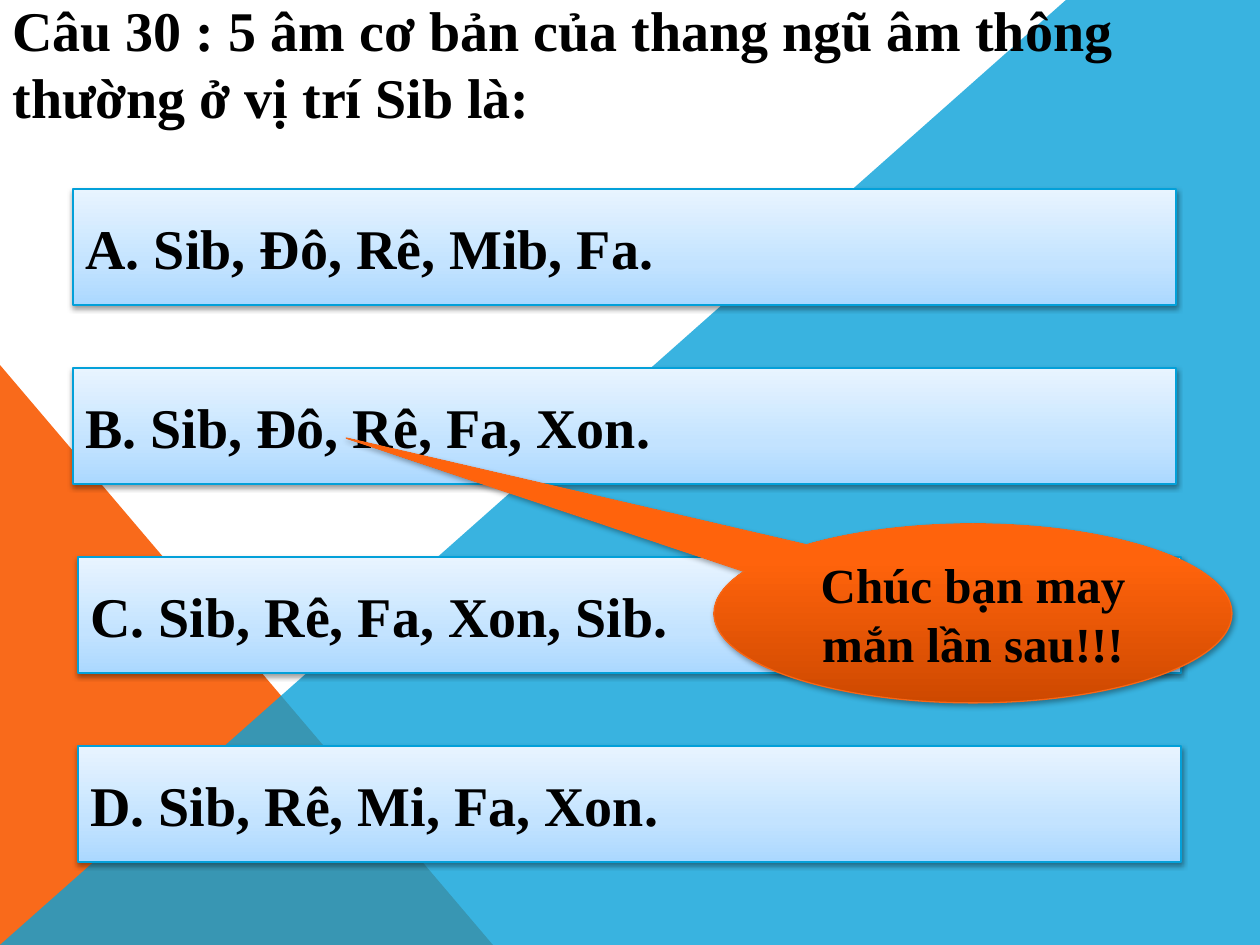
from dataclasses import dataclass

from lxml.etree import SubElement
from pptx import Presentation
from pptx.dml.color import RGBColor
from pptx.enum.shapes import MSO_SHAPE
from pptx.enum.text import MSO_ANCHOR, PP_ALIGN
from pptx.oxml.ns import qn
from pptx.util import Emu, Pt

PX = 914400 // 126


@dataclass(frozen=True)
class Theme:
    font: str = "Times New Roman"
    text: str = "000000"
    orange: str = "F96A1B"
    blue: str = "08A1D9"
    answer_line: str = "03A0D9"
    answer_stops: tuple = ((0, "ABD8FF"), (35, "C3E3FF"), (100, "E8F4FF"))
    callout_line: str = "F96615"
    callout_stops: tuple = ((0, "CE4900"), (80, "FF630C"), (100, "FF640E"))
    large: int = 32
    medium: int = 28


THEME = Theme()


def px(*lengths):
    return [Emu(length * PX) for length in lengths]


def add_color(parent, color, alpha=100):
    node = SubElement(parent, qn("a:srgbClr"), val=color)
    if alpha < 100:
        SubElement(node, qn("a:alpha"), val=str(alpha * 1000))


def fill_plain(shape, color, alpha=100):
    shape.shadow.inherit = False
    shape.line.fill.background()
    shape.fill.solid()
    shape.fill.fore_color.rgb = RGBColor.from_string(color)
    if alpha < 100:
        node = shape.fill._xPr.find(".//" + qn("a:srgbClr"))
        SubElement(node, qn("a:alpha"), val=str(alpha * 1000))


def fill_raised(shape, stops, line, shadow_alpha):
    """Vertical gradient from the bottom up, thin outline and soft shadow."""
    shape.fill.gradient()
    gradient = shape._element.spPr.find(qn("a:gradFill"))
    for child in list(gradient):
        gradient.remove(child)
    stop_list = SubElement(gradient, qn("a:gsLst"))
    for position, color in stops:
        add_color(SubElement(stop_list, qn("a:gs"), pos=str(position * 1000)), color)
    SubElement(gradient, qn("a:lin"), ang="16200000", scaled="0")

    shape.line.color.rgb = RGBColor.from_string(line)
    shape.line.width = Pt(0.75)

    shape.shadow.inherit = False
    effects = shape._element.spPr.find(qn("a:effectLst"))
    shadow = SubElement(effects, qn("a:outerShdw"), blurRad="40000", dist="20000",
                        dir="5400000", rotWithShape="0")
    add_color(shadow, "000000", shadow_alpha)


def write_text(shape, text, size=THEME.large, align=PP_ALIGN.LEFT, before=0):
    frame = shape.text_frame
    frame.word_wrap = True
    frame.vertical_anchor = MSO_ANCHOR.MIDDLE
    para = frame.paragraphs[0]
    para.alignment = align
    para.space_before = Pt(before)
    span = para.add_run()
    span.text = text
    span.font.name = THEME.font
    span.font.size = Pt(size)
    span.font.bold = True
    span.font.color.rgb = RGBColor.from_string(THEME.text)


def add_background(page):
    triangle = page.shapes.add_shape(MSO_SHAPE.RIGHT_TRIANGLE, *px(0, 365, 493, 580))
    fill_plain(triangle, THEME.orange)
    builder = page.shapes.build_freeform(0, 945, scale=PX)
    builder.add_line_segments([(1066, 0), (1260, 0), (1260, 945)], close=True)
    fill_plain(builder.convert_to_shape(), THEME.blue, alpha=80)


def add_question(page, text):
    box = page.shapes.add_textbox(*px(0, 0, 1260, 126))
    write_text(box, text)


def add_answer(page, text, left, top, before):
    box = page.shapes.add_shape(MSO_SHAPE.RECTANGLE, *px(left, top, 1103, 116))
    fill_raised(box, THEME.answer_stops, THEME.answer_line, 38)
    write_text(box, text, before=before)


def add_callout(page, text):
    bubble = page.shapes.add_shape(MSO_SHAPE.OVAL_CALLOUT, *px(714, 524, 518, 179))
    bubble.adjustments[0] = -1.21
    bubble.adjustments[1] = -0.98
    fill_raised(bubble, THEME.callout_stops, THEME.callout_line, 35)
    write_text(bubble, text, size=THEME.medium, align=PP_ALIGN.CENTER)


def main():
    deck = Presentation()
    deck.slide_width, deck.slide_height = px(1260, 945)
    page = deck.slides.add_slide(deck.slide_layouts[6])

    # Background shapes and question
    add_background(page)
    add_question(page, "Câu 30 : 5 âm cơ bản của thang ngũ âm thông thường ở vị trí Sib là:")

    # Answers: text, left, top, space before in points
    answers = [
        ("A. Sib, Đô, Rê, Mib, Fa.", 73, 189, 13),
        ("B. Sib, Đô, Rê, Fa, Xon.", 73, 368, 6),
        ("C. Sib, Rê, Fa, Xon, Sib.", 78, 557, 13),
        ("D. Sib, Rê, Mi, Fa, Xon.", 78, 746, 6),
    ]
    for answer in answers:
        add_answer(page, *answer)

    # Feedback bubble pointing at answer B
    add_callout(page, "Chúc bạn may mắn lần sau!!!")
    deck.save("out.pptx")


if __name__ == "__main__":
    main()
